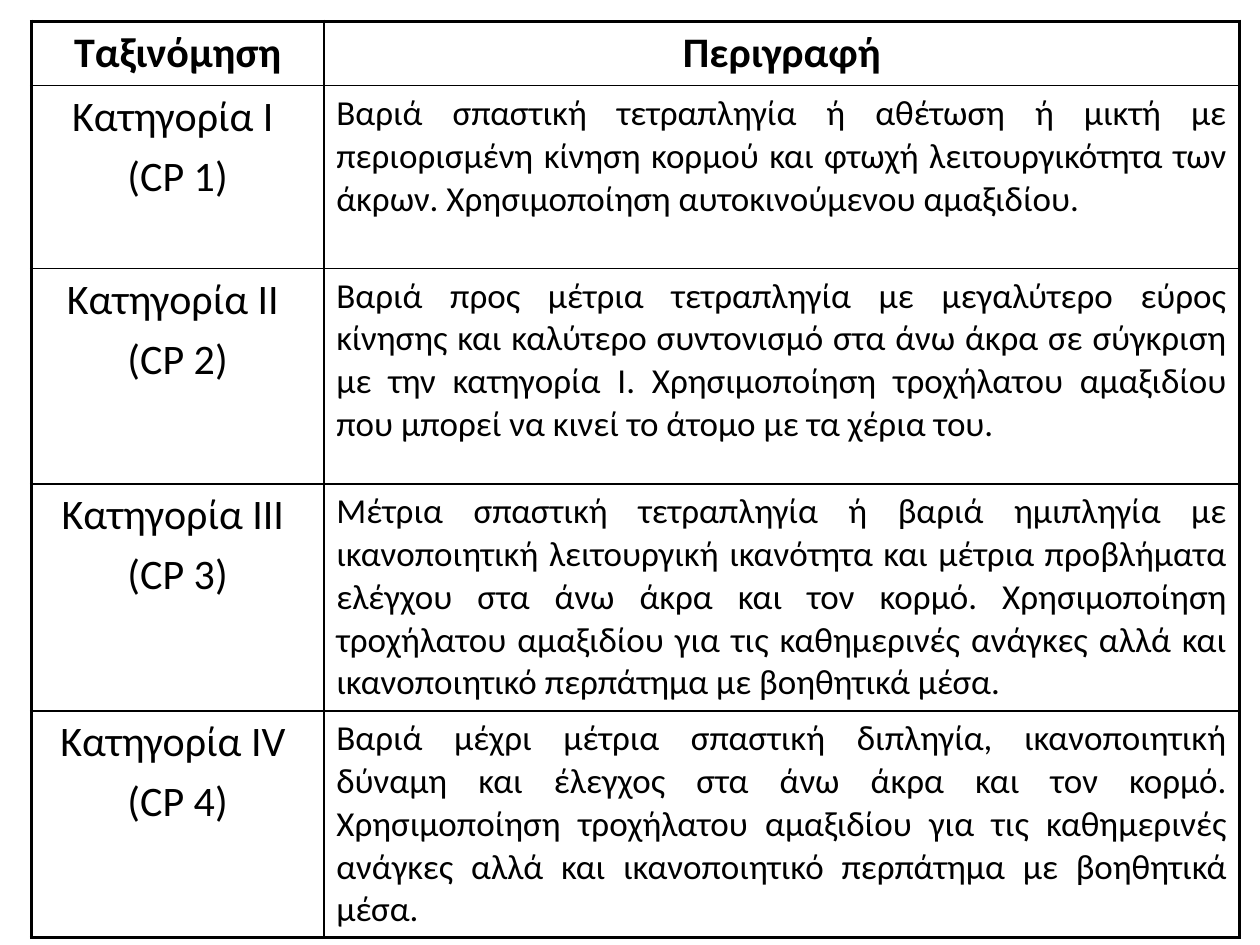
from typing import NamedTuple

from lxml import etree
from pptx import Presentation
from pptx.dml.color import RGBColor
from pptx.enum.text import PP_ALIGN
from pptx.oxml.ns import qn
from pptx.util import Inches, Pt

CENTER, JUSTIFY = PP_ALIGN.CENTER, PP_ALIGN.JUSTIFY
BLACK = RGBColor(0x00, 0x00, 0x00)
FONT = "Calibri"
THIN, THICK = Pt(1), Pt(2.25)
COL_WIDTHS = (2.32, 7.27)
ROW_HEIGHTS = (0.51, 1.45, 1.71, 1.79, 1.55)


class Category(NamedTuple):
    name: str
    code: str
    description: str


HEADERS = ("Ταξινόμηση", "Περιγραφή")
CATEGORIES = (
    Category("Κατηγορία Ι ", "(CP 1)",
             "Βαριά σπαστική τετραπληγία ή αθέτωση ή μικτή με περιορισμένη κίνηση "
             "κορμού και φτωχή λειτουργικότητα των άκρων. Χρησιμοποίηση "
             "αυτοκινούμενου αμαξιδίου."),
    Category("Κατηγορία II ", "(CP 2)",
             "Βαριά προς μέτρια τετραπληγία με μεγαλύτερο εύρος κίνησης και καλύτερο "
             "συντονισμό στα άνω άκρα σε σύγκριση με την κατηγορία Ι. Χρησιμοποίηση "
             "τροχήλατου αμαξιδίου που μπορεί να κινεί το άτομο με τα χέρια του."),
    Category("Κατηγορία III ", "(CP 3)",
             "Μέτρια σπαστική τετραπληγία ή βαριά ημιπληγία με ικανοποιητική "
             "λειτουργική ικανότητα και μέτρια προβλήματα ελέγχου στα άνω άκρα και "
             "τον κορμό. Χρησιμοποίηση τροχήλατου αμαξιδίου για τις καθημερινές "
             "ανάγκες αλλά και ικανοποιητικό περπάτημα με βοηθητικά μέσα."),
    Category("Κατηγορία IV ", "(CP 4)",
             "Βαριά μέχρι μέτρια σπαστική διπληγία, ικανοποιητική δύναμη και έλεγχος "
             "στα άνω άκρα και τον κορμό. Χρησιμοποίηση τροχήλατου αμαξιδίου για τις "
             "καθημερινές ανάγκες αλλά και ικανοποιητικό περπάτημα με βοηθητικά μέσα."),
)


def write_text(cell, *lines: str, size: int = 24, bold: bool = False,
               align: PP_ALIGN = CENTER) -> None:
    """Write one paragraph per line, each with a fifth of its size above it."""
    tf = cell.text_frame
    for i, line in enumerate(lines):
        p = tf.add_paragraph() if i else tf.paragraphs[0]
        p.alignment = align
        p.space_before = Pt(size * 0.2)
        r = p.add_run()
        r.text = line
        r.font.name = FONT
        r.font.size = Pt(size)
        r.font.bold = bold
        r.font.color.rgb = BLACK


def set_borders(cell, **widths: int) -> None:
    """Draw the sides L, R, T and B, given in that order."""
    tc_pr = cell._tc.get_or_add_tcPr()
    for side, width in widths.items():
        ln = etree.SubElement(tc_pr, qn(f"a:ln{side}"), w=str(width))
        fill = etree.SubElement(ln, qn("a:solidFill"))
        etree.SubElement(fill, qn("a:srgbClr"), val=str(BLACK))


def frame_table(table) -> None:
    """Give the table a thick outline, thin inner lines and no fill."""
    last_row, last_col = len(ROW_HEIGHTS) - 1, len(COL_WIDTHS) - 1
    for row in range(last_row + 1):
        for col in range(last_col + 1):
            cell = table.cell(row, col)
            set_borders(cell,
                        L=THICK if col == 0 else THIN,
                        R=THICK if col == last_col else THIN,
                        T=THICK if row == 0 else THIN,
                        B=THICK if row == last_row else THIN)
            cell.fill.background()


def main() -> None:
    prs = Presentation()
    prs.slide_width, prs.slide_height = Inches(10), Inches(7.5)
    s = prs.slides.add_slide(prs.slide_layouts[6])
    table = s.shapes.add_table(
        len(ROW_HEIGHTS), len(COL_WIDTHS), Inches(0.25), Inches(0.17),
        Inches(sum(COL_WIDTHS)), Inches(sum(ROW_HEIGHTS))).table
    table.first_row = table.horz_banding = False
    for column, width in zip(table.columns, COL_WIDTHS):
        column.width = Inches(width)
    for row, height in zip(table.rows, ROW_HEIGHTS):
        row.height = Inches(height)

    for col, header in enumerate(HEADERS):
        write_text(table.cell(0, col), header, bold=True)
    for row, category in enumerate(CATEGORIES, start=1):
        write_text(table.cell(row, 0), category.name, category.code)
        write_text(table.cell(row, 1), category.description, size=20, align=JUSTIFY)
    frame_table(table)
    prs.save("out.pptx")


if __name__ == "__main__":
    main()
